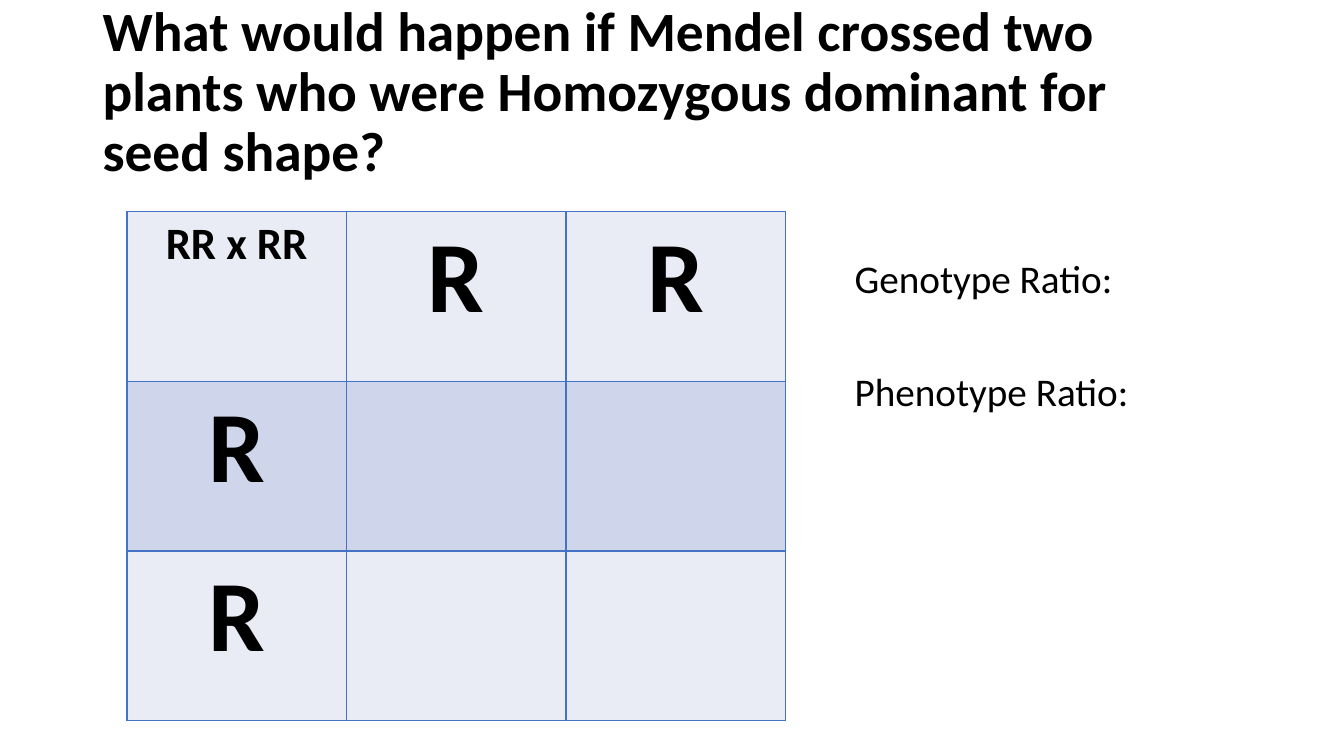
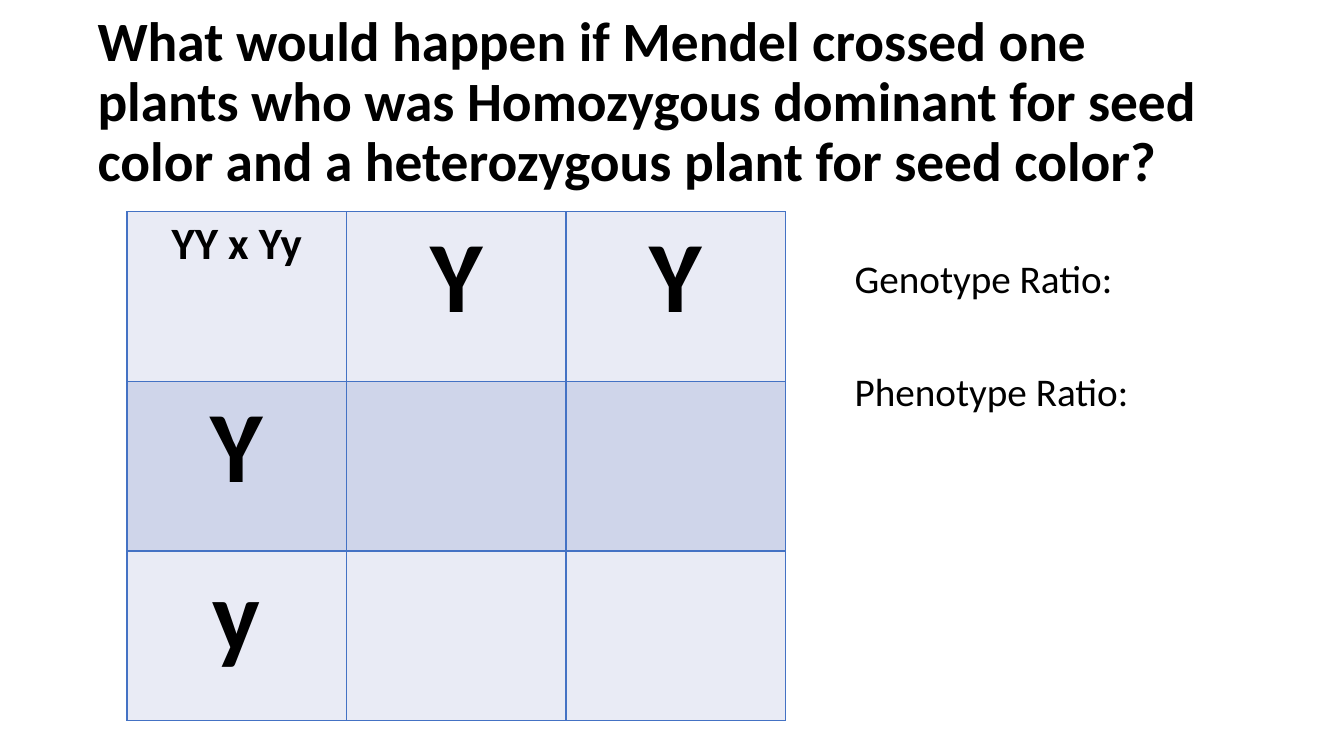
from lxml import etree
from pptx import Presentation
from pptx.dml import color
from pptx.enum import text
from pptx.oxml import ns
from pptx.util import Pt

INK = "000000"
BORDER = "4472C4"
BANDS = ("E9EBF5", "CFD5EA")
FONT = "Calibri"


def rgb(value):
    return color.RGBColor.from_string(value)


class PunnettDeck:
    def __init__(self):
        self.deck = Presentation()
        self.deck.slide_width = Pt(960)
        self.deck.slide_height = Pt(540)
        self.slide = None

    def new_slide(self):
        self.slide = self.deck.slides.add_slide(self.deck.slide_layouts[6])

    def style(self, paragraph, size, bold=False):
        font = paragraph.font
        font.name, font.size, font.bold = FONT, Pt(size), bold
        font.color.rgb = rgb(INK)

    def text_block(self, lines, left, top, width, height, size,
                   bold=False, anchor=text.MSO_ANCHOR.TOP, gap=0):
        frame = self.slide.shapes.add_textbox(
            Pt(left), Pt(top), Pt(width), Pt(height)).text_frame
        frame.word_wrap = True
        frame.vertical_anchor = anchor
        frame.text = "\n".join(lines)
        for index, paragraph in enumerate(frame.paragraphs):
            paragraph.line_spacing = 0.9
            paragraph.space_before = Pt(gap if index else 0)
            self.style(paragraph, size, bold)

    def question(self, wording, left, top):
        self.text_block([wording], left, top, 816.5, 75.6, 39.6,
                        bold=True, anchor=text.MSO_ANCHOR.MIDDLE)

    def ratios(self):
        self.text_block(["Genotype Ratio:", "Phenotype Ratio:"],
                        603.4, 182.2, 211.7, 150.5, 28, gap=50)

    def outline(self, cell):
        properties = cell._tc.get_or_add_tcPr()
        for position, side in enumerate(("lnL", "lnR", "lnT", "lnB")):
            line = etree.Element(ns.qn(f"a:{side}"), w=str(Pt(1)))
            fill = etree.SubElement(line, ns.qn("a:solidFill"))
            etree.SubElement(fill, ns.qn("a:srgbClr"), val=BORDER)
            properties.insert(position, line)

    def punnett_square(self, cross, first_parent, second_parent):
        column, row = 156.8, 121.2
        square = self.slide.shapes.add_table(
            3, 3, Pt(90.7), Pt(151.2), Pt(3 * column), Pt(3 * row)).table
        for side in range(3):
            square.columns[side].width = Pt(column)
            square.rows[side].height = Pt(row)
        labels = {(0, 0): cross}
        for index in (1, 2):
            labels[0, index] = first_parent[index - 1]
            labels[index, 0] = second_parent[index - 1]
        for r in range(3):
            for c in range(3):
                cell = square.cell(r, c)
                cell.fill.solid()
                cell.fill.fore_color.rgb = rgb(BANDS[r % 2])
                self.outline(cell)
                if (r, c) in labels:
                    cell.text = labels[r, c]
                    allele = cell.text_frame.paragraphs[0]
                    allele.alignment = text.PP_ALIGN.CENTER
                    self.style(allele, 72 if r or c else 32, bold=True)

    def crossing(self, wording, left, top, first_parent, second_parent):
        self.new_slide()
        self.question(wording, left, top)
        self.ratios()
        self.punnett_square(f"{first_parent} x {second_parent}",
                            first_parent, second_parent)


def main():
    punnett = PunnettDeck()
    punnett.crossing(
        "What would happen if Mendel crossed two plants who were "
        "Homozygous dominant for seed shape?", 66.2, 28.8, "RR", "RR")
    punnett.crossing(
        "What would happen if Mendel crossed one plants who was "
        "Homozygous dominant for seed color and a heterozygous plant "
        "for seed color?", 62.6, 36, "YY", "Yy")
    punnett.deck.save("out.pptx")


if __name__ == "__main__":
    main()
